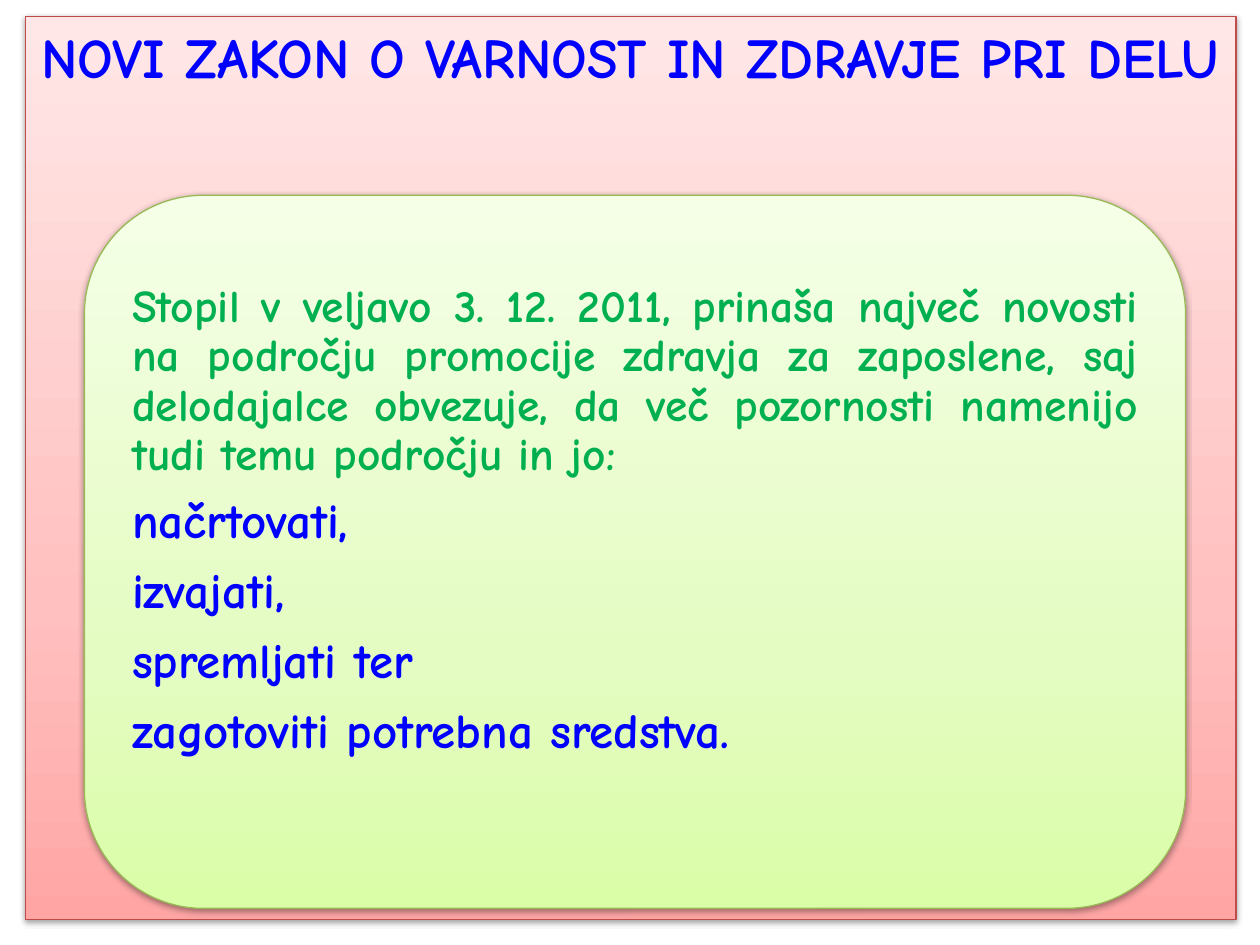
from copy import deepcopy

from lxml import etree
from pptx import Presentation
from pptx.dml.color import RGBColor
from pptx.enum.shapes import MSO_SHAPE as Shape
from pptx.enum.text import MSO_ANCHOR as Anchor, PP_ALIGN as Align
from pptx.oxml.ns import qn
from pptx.util import Inches, Pt

FONT = "Comic Neue"
BLUE = RGBColor(0x00, 0x00, 0xFF)
GREEN = RGBColor(0x00, 0xB0, 0x50)
RED_LINE = RGBColor(0xBF, 0x4C, 0x48)
LIME_LINE = RGBColor(0x98, 0xB9, 0x55)
REDS = [RGBColor(0xFF, 0xA6, 0xA5), RGBColor(0xFF, 0xC0, 0xBF),
        RGBColor(0xFF, 0xE7, 0xE7)]
LIMES = [RGBColor(0xDA, 0xFD, 0xA7), RGBColor(0xE4, 0xFC, 0xC2),
         RGBColor(0xF5, 0xFF, 0xE7)]
STOPS = [0, 0.35, 1]

TITLE = "NOVI ZAKON O VARNOST IN ZDRAVJE PRI DELU"
INTRO = ("Stopil v veljavo 3. 12. 2011, prinaša največ novosti na področju "
         "promocije zdravja za zaposlene, saj delodajalce obvezuje, da več "
         "pozornosti namenijo tudi temu področju in jo:")
DUTIES = ["načrtovati,", "izvajati,", "spremljati ter",
          "zagotoviti potrebna sredstva."]


def add_shadow(shape):
    effects = etree.SubElement(shape._element.spPr, qn("a:effectLst"))
    outer = etree.SubElement(effects, qn("a:outerShdw"), blurRad=str(Pt(3.1)),
                             dist=str(Pt(1.6)), dir="5400000", rotWithShape="0")
    color = etree.SubElement(outer, qn("a:srgbClr"), val="000000")
    etree.SubElement(color, qn("a:alpha"), val="38000")


def add_panel(slide, kind, box, colors, edge):
    panel = slide.shapes.add_shape(kind, *map(Inches, box))
    fill = panel.fill
    fill.gradient()
    fill.gradient_angle = 90
    stops = panel._element.spPr.find(".//" + qn("a:gsLst"))
    stops.append(deepcopy(stops[-1]))
    for stop, place, color in zip(fill.gradient_stops, STOPS, colors):
        stop.position = place
        stop.color.rgb = color
    panel.line.color.rgb = edge
    panel.line.width = Pt(0.75)
    add_shadow(panel)
    return panel


def set_text(para, text, size, color, align):
    para.text = text
    para.alignment = align
    font = para.font
    font.name, font.size, font.bold = FONT, Pt(size), True
    font.color.rgb = color


deck = Presentation()
deck.slide_width, deck.slide_height = Inches(10), Inches(7.5)
slide = deck.slides.add_slide(deck.slide_layouts[6])

back = add_panel(slide, Shape.RECTANGLE, (0.2, 0.13, 9.61, 7.17), REDS, RED_LINE)
back.text_frame.vertical_anchor = Anchor.TOP
set_text(back.text_frame.paragraphs[0], TITLE, 32, BLUE, Align.CENTER)

add_panel(slide, Shape.ROUNDED_RECTANGLE, (0.67, 1.55, 8.74, 5.66),
          LIMES, LIME_LINE)

body = slide.shapes.add_textbox(*map(Inches, (0.95, 1.82, 8.19, 5.11))).text_frame
body.word_wrap = True
body.margin_left = body.margin_right = body.margin_bottom = Inches(0.1)
body.margin_top = Inches(0.43)
rows = [(INTRO, 26, GREEN, Align.JUSTIFY)]
rows += [(duty, 28, BLUE, Align.LEFT) for duty in DUTIES]
for i, row in enumerate(rows):
    para = body.add_paragraph() if i else body.paragraphs[0]
    set_text(para, *row)
    para.line_spacing = 0.9
    para.space_after = Pt(0.35 * row[1])

deck.save("out.pptx")
